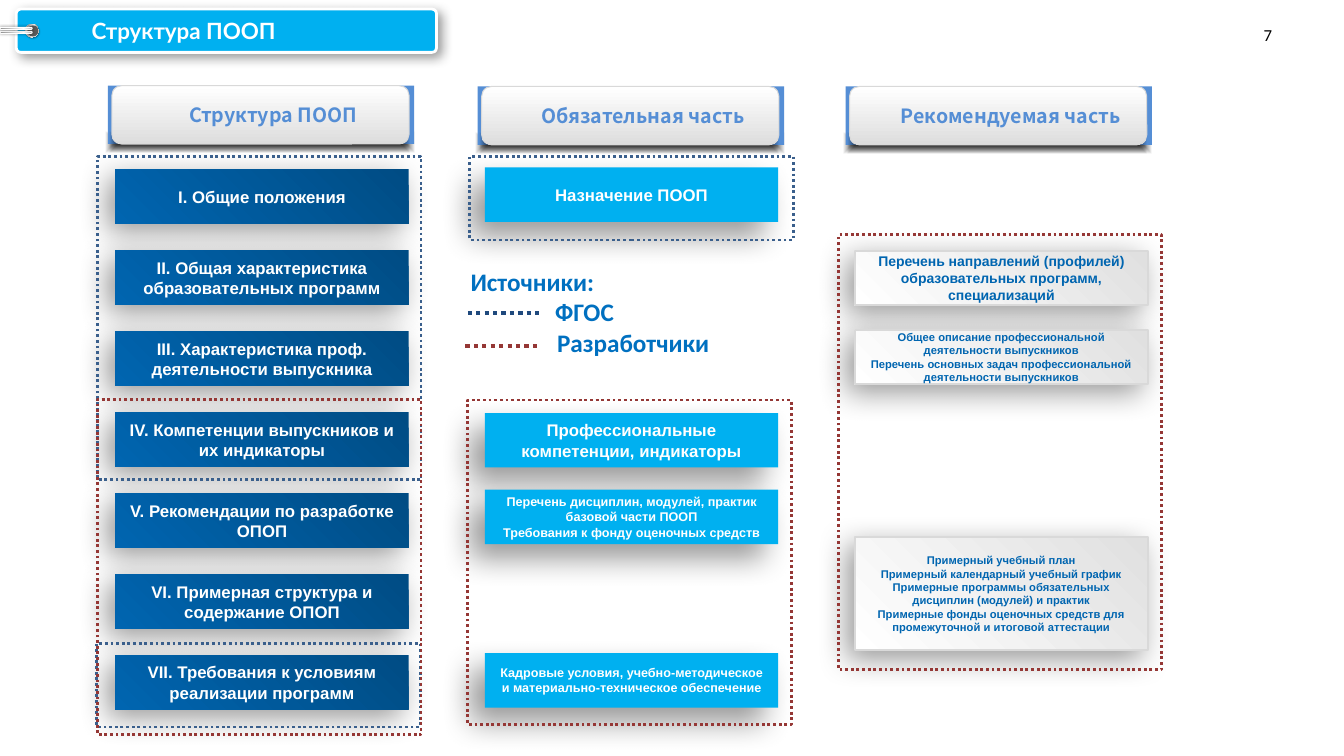
from lxml.etree import SubElement
from pptx import Presentation
from pptx.dml.color import RGBColor
from pptx.enum.dml import MSO_LINE_DASH_STYLE as Dash
from pptx.enum.shapes import MSO_CONNECTOR, MSO_SHAPE as Preset
from pptx.enum.text import MSO_ANCHOR as Anchor, PP_ALIGN as Align
from pptx.oxml.ns import qn
from pptx.util import Cm, Pt

COLORS = {
    "white": "FFFFFF", "black": "000000", "cyan": "00B0F0",
    "navy": "004C84", "blue": "0065B0", "legend": "0070C0",
    "header": "558ED5", "silver": "DDDDDD", "mist": "E0E0E0",
    "edge": "D9D9D9", "standard_frame": "3A5F8C", "standard_line": "1F497D",
    "developer": "953735", "hole": "595959", "steel": "A6A6A6",
    "shine": "F2F2F2", "iron": "808080",
}
NAVY_GRADIENT = ([(0, "navy"), (100, "blue")], 135)
MIST_GRADIENT = ([(0, "mist"), (100, "white")], 135)
PLATE_GRADIENT = ([(0, "white"), (100, "silver")], 90)
RING_GRADIENT = ([(0, "white"), (17, "steel"), (35, "shine"),
                  (55, "steel"), (75, "shine"), (100, "steel")], 45)
BAR_GRADIENT = ([(0, "iron"), (23, "steel"), (52, "edge"), (74, "white"), (100, "steel")], 0)
GLOW_GRADIENT = ([(0, "black", 70), (100, "black", 0)], None)
CARD_WIDTH, CARD_HEIGHT = 7.39, 1.37
COLUMN_LEFTS = (2.91, 12.22, 21.54)
CARD_STYLES = {
    "section": (NAVY_GRADIENT, None, (22, 8, 135), "white"),
    "required": ("cyan", None, (22, 15, 135), "white"),
    "recommended": (MIST_GRADIENT, ("edge", 1.25), (22, 8, 135), "blue"),
}


def rgb(name):
    return RGBColor.from_string(COLORS[name])


def add_color(parent, name, opacity):
    color = SubElement(parent, qn("a:srgbClr"), val=COLORS[name])
    if opacity < 100:
        SubElement(color, qn("a:alpha"), val=str(opacity * 1000))


def set_gradient(shape, stops, angle):
    shape.fill.gradient()
    gradient = shape.element.spPr.find(qn("a:gradFill"))
    for child in list(gradient):
        gradient.remove(child)
    stop_list = SubElement(gradient, qn("a:gsLst"))
    for position, name, *opacity in stops:
        stop = SubElement(stop_list, qn("a:gs"), pos=str(position * 1000))
        add_color(stop, name, opacity[0] if opacity else 100)
    if angle is None:
        radial = SubElement(gradient, qn("a:path"))
        radial.set("path", "shape")
        SubElement(radial, qn("a:fillToRect"), l="50000", t="50000", r="50000", b="50000")
    else:
        SubElement(gradient, qn("a:lin"), ang=str(angle * 60000), scaled="0")


def set_shadow(shape, blur, distance, direction):
    effects = shape.element.spPr.find(qn("a:effectLst"))
    shadow = SubElement(effects, qn("a:outerShdw"), blurRad=str(Pt(blur)), dist=str(Pt(distance)),
                        dir=str(direction * 60000), algn="ctr", rotWithShape="0")
    add_color(shadow, "black", 40)


def add_block(slide, box, fill=None, line=None, shadow=None, preset=Preset.RECTANGLE, rounding=None):
    shape = slide.shapes.add_shape(preset, *map(Cm, box))
    shape.shadow.inherit = False
    if rounding is not None:
        shape.adjustments[0] = rounding
    if fill is None:
        shape.fill.background()
    elif isinstance(fill, tuple):
        set_gradient(shape, *fill)
    else:
        shape.fill.solid()
        shape.fill.fore_color.rgb = rgb(fill)
    if line:
        shape.line.color.rgb = rgb(line[0])
        shape.line.width = Pt(line[1])
    else:
        shape.line.fill.background()
    if shadow:
        set_shadow(shape, *shadow)
    return shape


def write_text(shape, text, size, color, font="Arial", align=Align.CENTER, anchor=Anchor.MIDDLE, bold=True):
    frame = shape.text_frame
    frame.word_wrap = True
    frame.vertical_anchor = anchor
    frame.text = text
    for paragraph in frame.paragraphs:
        paragraph.alignment = align
        for run in paragraph.runs:
            run.font.name = font
            run.font.size = Pt(size)
            run.font.bold = bold
            run.font.color.rgb = rgb(color)


def add_label(slide, box, text, size, color, font, **options):
    label = slide.shapes.add_textbox(*map(Cm, box))
    write_text(label, text, size, color, font, **options)
    return label


def add_card(slide, style, left, top, text, size=12, height=CARD_HEIGHT):
    fill, line, shadow, color = CARD_STYLES[style]
    card = add_block(slide, (left, top, CARD_WIDTH, height), fill, line, shadow)
    write_text(card, text, size, color)


def add_header(slide, left, top, text):
    add_block(slide, (left - 0.15, top + 1.17, 7.77, 0.51), GLOW_GRADIENT)
    add_block(slide, (left - 0.1, top, 7.72, 1.47), "header")
    add_block(slide, (left - 0.05, top + 1.17, 7.54, 0.51), GLOW_GRADIENT)
    plate = add_block(slide, (left, top, 7.49, 1.47), PLATE_GRADIENT, ("edge", 0.75),
                      preset=Preset.ROUNDED_RECTANGLE, rounding=0.167)
    write_text(plate, text, 14, "header", "Noto Sans CJK SC")
    plate.text_frame.margin_left = Cm(0.89)


def add_frame(slide, box, color):
    frame = add_block(slide, box, line=(color, 2))
    frame.line.dash_style = Dash.ROUND_DOT


def add_legend_line(slide, left, top, color):
    line = slide.shapes.add_connector(
        MSO_CONNECTOR.STRAIGHT, Cm(left), Cm(top), Cm(left + 1.88), Cm(top))
    line.line.color.rgb = rgb(color)
    line.line.width = Pt(3)
    line.line.dash_style = Dash.ROUND_DOT
    SubElement(line.element.spPr, qn("a:effectLst"))


def add_title(slide, text):
    add_block(slide, (0.41, 0.23, 10.59, 1.09), "cyan", ("white", 2), (8, 4, 45),
              Preset.ROUNDED_RECTANGLE, 0.1)
    add_block(slide, (0.64, 0.61, 0.33, 0.33), RING_GRADIENT, None, (1, 1, 45), Preset.OVAL)
    add_block(slide, (0.69, 0.64, 0.28, 0.28), "hole", preset=Preset.OVAL)
    for top in (0.79, 0.69):
        add_block(slide, (0, top, 0.81, 0.05), BAR_GRADIENT, ("white", 0.75), (2, 0, 0),
                  Preset.ROUNDED_RECTANGLE, 0.5)
    label = add_label(slide, (0.69, 0.3, 10.31, 0.94), text, 16, "white", "Lato",
                      align=Align.LEFT, anchor=Anchor.TOP)
    label.text_frame.margin_left = Cm(1.62)


def main():
    presentation = Presentation()
    presentation.slide_width, presentation.slide_height = Cm(33.87), Cm(19.05)
    slide = presentation.slides.add_slide(presentation.slide_layouts[6])
    add_label(slide, (30.71, 0.38, 2.49, 0.99), "7", 12, "black", "Calibri", bold=False)
    add_title(slide, "Структура ПООП")

    sections = (
        "I. Общие положения",
        "II. Общая характеристика образовательных программ",
        "III. Характеристика проф. деятельности выпускника",
        "IV. Компетенции выпускников и их индикаторы",
        "V. Рекомендации по разработке ОПОП",
        "VI. Примерная структура и содержание ОПОП",
        "VII. Требования к условиям реализации программ",
    )
    for index, text in enumerate(sections):
        add_card(slide, "section", COLUMN_LEFTS[0], 4.27 + 2.04 * index, text)

    for top, size, text in (
        (4.22, 12, "Назначение ПООП"),
        (10.41, 12, "Профессиональные компетенции, индикаторы"),
        (12.34, 9, "Перечень дисциплин, модулей, практик базовой части ПООП\n"
                   "Требования к фонду оценочных средств"),
        (16.46, 9, "Кадровые условия, учебно-методическое и материально-техническое обеспечение"),
    ):
        add_card(slide, "required", COLUMN_LEFTS[1], top, text, size)

    for top, height, size, text in (
        (6.32, CARD_HEIGHT, 10, "Перечень направлений (профилей) образовательных программ, специализаций"),
        (8.31, CARD_HEIGHT, 8, "Общее описание профессиональной деятельности выпускников\n"
                               "Перечень основных задач профессиональной деятельности выпускников"),
        (13.54, 2.84, 8, "Примерный учебный план\n"
                         "Примерный календарный учебный график\n"
                         "Примерные программы обязательных дисциплин (модулей) и практик\n"
                         "Примерные фонды оценочных средств для промежуточной и итоговой аттестации"),
    ):
        add_card(slide, "recommended", COLUMN_LEFTS[2], top, text, size, height)

    for left, top, text in ((2.82, 2.16, "Структура ПООП"), (12.14, 2.18, "Обязательная часть"),
                            (21.41, 2.18, "Рекомендуемая часть")):
        add_header(slide, left, top, text)

    for left, top, height, color in (
        (2.46, 3.94, 8.15, "standard_frame"), (2.44, 16.21, 2.11, "standard_frame"),
        (11.84, 3.94, 2.11, "standard_frame"), (21.13, 5.92, 10.95, "developer"),
        (2.46, 10.06, 8.46, "developer"), (11.79, 10.08, 8.18, "developer"),
    ):
        add_frame(slide, (left, top, 8.15, height), color)

    add_legend_line(slide, 11.79, 7.89, "standard_line")
    add_legend_line(slide, 11.73, 8.71, "developer")
    for left, top, width, text in ((11.61, 6.58, 7.92, "Источники:"), (13.74, 7.34, 3.89, "ФГОС"),
                                   (13.79, 8.13, 5.31, "Разработчики")):
        add_label(slide, (left, top, width, 1.02), text, 18, "legend", "Calibri",
                  align=Align.LEFT, anchor=Anchor.TOP)
    presentation.save("out.pptx")


if __name__ == "__main__":
    main()
